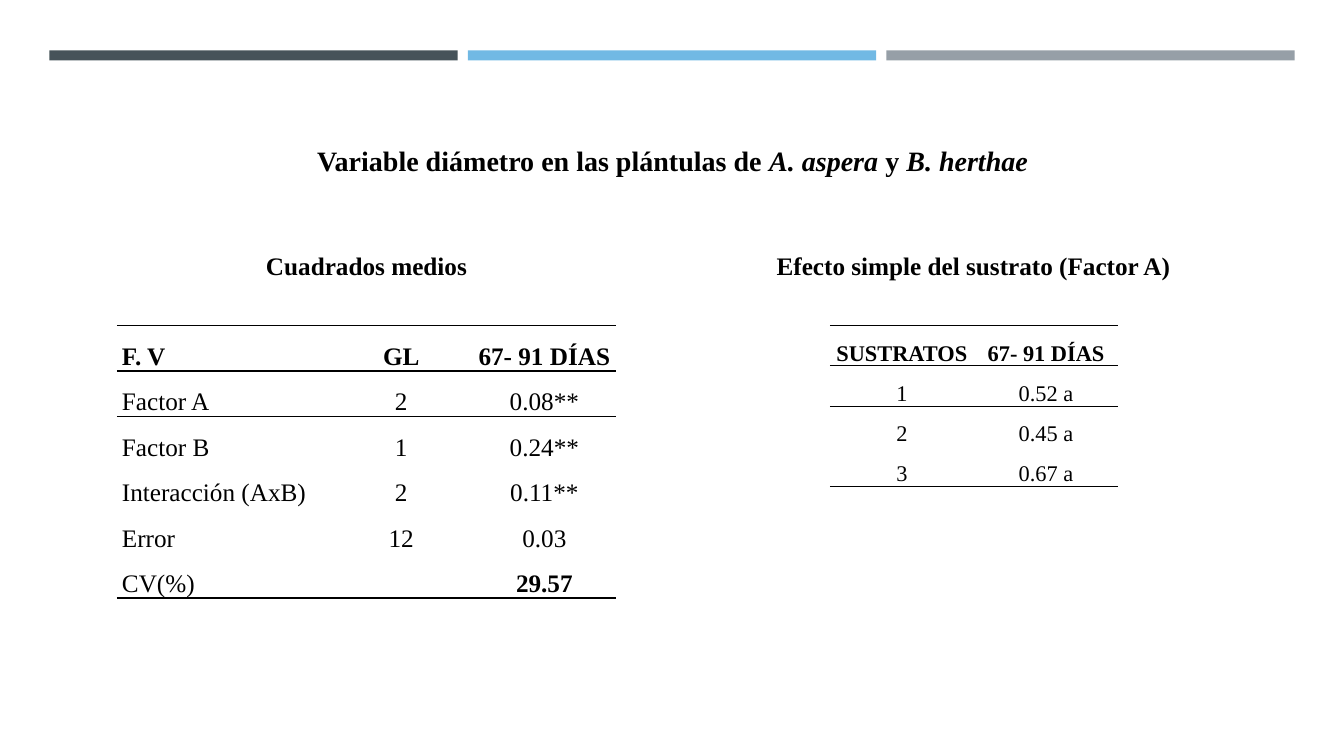
import pptx
import pptx.util
import pptx.dml.color
import pptx.enum.shapes
import pptx.enum.text
import pptx.oxml
import pptx.oxml.ns

Inches = pptx.util.Inches
Pt = pptx.util.Pt
Align = pptx.enum.text.PP_ALIGN
Anchor = pptx.enum.text.MSO_ANCHOR


def color(hex_code):
    return pptx.dml.color.RGBColor.from_string(hex_code)


def format_paragraph(paragraph, size, bold, align, line_spacing, before, after):
    paragraph.alignment = align
    paragraph.line_spacing = line_spacing
    paragraph.space_before = Pt(before)
    paragraph.space_after = Pt(after)
    paragraph.font.name = "Times New Roman"
    paragraph.font.size = Pt(size)
    paragraph.font.bold = bold
    paragraph.font.color.rgb = color("000000")


presentation = pptx.Presentation()
presentation.slide_width = Inches(13.33)
presentation.slide_height = Inches(7.5)
slide = presentation.slides.add_slide(presentation.slide_layouts[6])

for index, bar_color in enumerate(["465359", "71B9E4", "969FA7"]):
    bar = slide.shapes.add_shape(
        pptx.enum.shapes.MSO_SHAPE.RECTANGLE,
        Inches(0.49 + 4.15 * index), Inches(0.5), Inches(4.05), Inches(0.1))
    bar.shadow.inherit = False
    bar.fill.solid()
    bar.fill.fore_color.rgb = color(bar_color)
    bar.line.fill.background()

headings = [
    (0.64, 1.37, 12.06, 20, 1.0, [
        ("Variable diámetro en las plántulas de ", False),
        ("A. aspera ", True), ("y ", False), ("B. herthae", True)]),
    (1.46, 2.4, 4.35, 18, 1.1, [("Cuadrados medios", False)]),
    (7.48, 2.4, 4.35, 18, 1.1, [("Efecto simple del sustrato (Factor A)", False)]),
]
for left, top, width, size, line_spacing, pieces in headings:
    heading = slide.shapes.add_textbox(
        Inches(left), Inches(top), Inches(width), Inches(0.44)).text_frame
    heading.word_wrap = True
    heading.vertical_anchor = Anchor.MIDDLE
    paragraph = heading.paragraphs[0]
    format_paragraph(paragraph, size, True, Align.CENTER, line_spacing, size * 0.2, 6)
    for words, italic in pieces:
        run = paragraph.add_run()
        run.text = words
        if italic:
            run.font.italic = True

mean_squares = [
    ["F. V", "GL", "67- 91 DÍAS"],
    ["Factor A", "2", "0.08**"],
    ["Factor B", "1", "0.24**"],
    ["Interacción (AxB)", "2", "0.11**"],
    ["Error", "12", "0.03"],
    ["CV(%)", "", "29.57"],
]
substrate_effect = [
    ["SUSTRATOS", "67- 91 DÍAS"],
    ["1", "0.52 a"],
    ["2", "0.45 a"],
    ["3", "0.67 a"],
]
tables = [
    (1.16, [2.11, 1.42, 1.42], 0.41, 18, Align.LEFT, mean_squares),
    (8.23, [1.43, 1.43], 0.37, 16, Align.CENTER, substrate_effect),
]
for left, widths, row_height, size, first_align, rows in tables:
    table = slide.shapes.add_table(
        len(rows), len(widths), Inches(left), Inches(3.23),
        Inches(sum(widths)), Inches(row_height * len(rows))).table
    table.first_row = False
    table.horz_banding = False
    for column, width in zip(table.columns, widths):
        column.width = Inches(width)
    ruled_edges = {0, 1, 2, len(rows)}
    for row_index, row in enumerate(rows):
        for column_index, value in enumerate(row):
            cell = table.cell(row_index, column_index)
            cell.margin_left = cell.margin_right = Inches(0.05)
            cell.margin_top = cell.margin_bottom = 0
            cell.vertical_anchor = Anchor.BOTTOM
            paragraph = cell.text_frame.paragraphs[0]
            if value:
                paragraph.text = value
            format_paragraph(
                paragraph, size, row_index == 0 or value == "29.57",
                Align.CENTER if column_index else first_align, 1.5, 0, 12)
            properties = cell._tc.get_or_add_tcPr()
            for side, ruled in [
                    ("L", False), ("R", False),
                    ("T", row_index in ruled_edges),
                    ("B", row_index + 1 in ruled_edges)]:
                paint = ('<a:solidFill><a:srgbClr val="000000"/></a:solidFill>'
                         if ruled else "<a:noFill/>")
                properties.append(pptx.oxml.parse_xml(
                    f'<a:ln{side} {pptx.oxml.ns.nsdecls("a")} w="12700">{paint}</a:ln{side}>'))
            cell.fill.background()

presentation.save("out.pptx")
